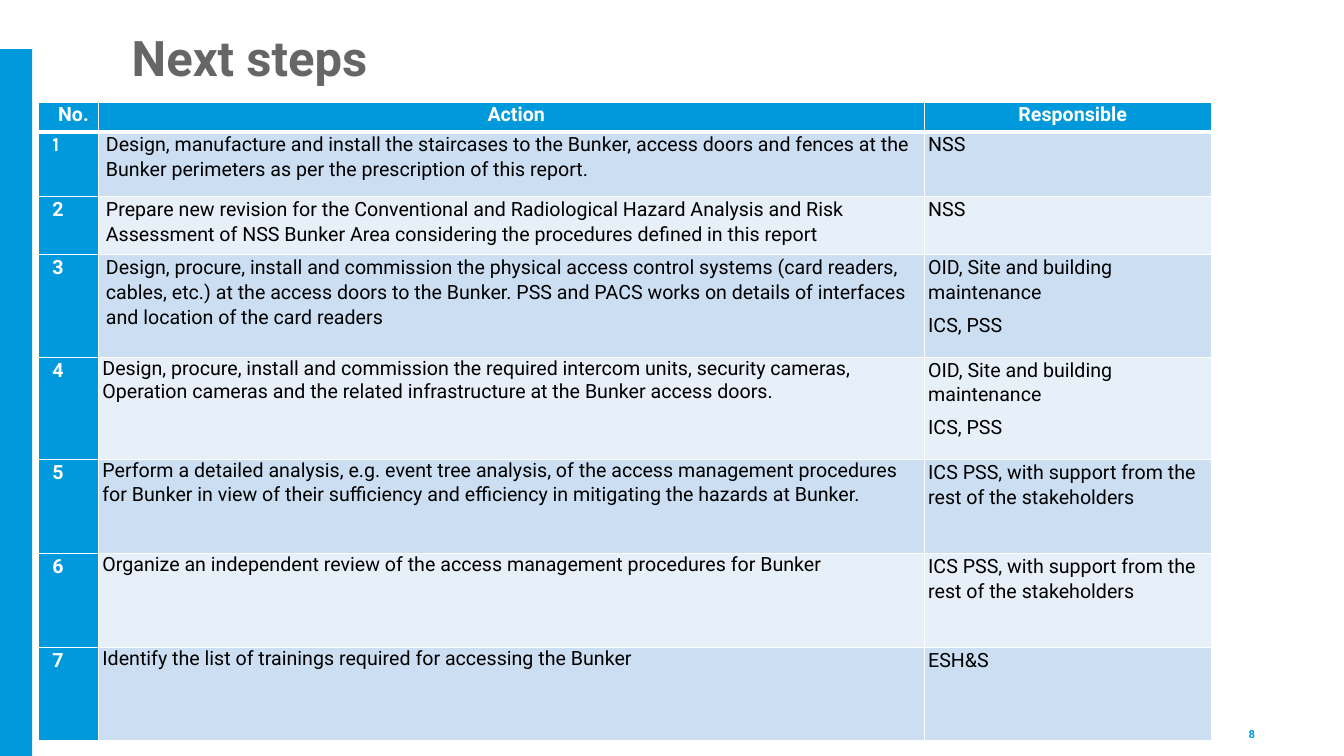
from lxml import etree
from pptx import Presentation
from pptx import util as u
from pptx.dml.color import RGBColor
from pptx.enum import shapes, text
from pptx.oxml import ns

BLUE = RGBColor(0x00, 0x99, 0xDC)
GREY = RGBColor(0x66, 0x66, 0x66)
BLACK = RGBColor(0x00, 0x00, 0x00)
WHITE = RGBColor(0xFF, 0xFF, 0xFF)
BANDS = [RGBColor(0xCC, 0xDE, 0xF2), RGBColor(0xE7, 0xEF, 0xF9)]

LEFT, CENTER, RIGHT = text.PP_ALIGN.LEFT, text.PP_ALIGN.CENTER, text.PP_ALIGN.RIGHT


def write(frame, content, size=14, color=BLACK, bold=False, font="Roboto",
          align=LEFT, line=1.0, after=0, indent=0):
    for index, words in enumerate(content.split("\n")):
        para = frame.add_paragraph() if index else frame.paragraphs[0]
        para.alignment = align
        para.line_spacing = line
        para.space_after = u.Pt(after)
        para._p.get_or_add_pPr().set("marL", str(u.Cm(indent)))
        span = para.add_run()
        span.text = words
        span.font.size = u.Pt(size)
        span.font.name = font
        span.font.bold = bold
        span.font.color.rgb = color


def style_cell(cell, fill, margin=0.1, bottom=1):
    cell.margin_left = cell.margin_right = u.Cm(margin)
    cell.margin_top = cell.margin_bottom = 0
    properties = cell._tc.get_or_add_tcPr()
    for side, width in (("lnL", 1), ("lnR", 1), ("lnT", 1), ("lnB", bottom)):
        border = etree.SubElement(properties, ns.qn("a:" + side), w=str(u.Pt(width)))
        paint = etree.SubElement(border, ns.qn("a:solidFill"))
        etree.SubElement(paint, ns.qn("a:srgbClr"), val=str(WHITE))
    cell.fill.solid()
    cell.fill.fore_color.rgb = fill


deck = Presentation()
deck.slide_width, deck.slide_height = u.Cm(33.87), u.Cm(19.05)
page = deck.slides.add_slide(deck.slide_layouts[6])

bar = page.shapes.add_shape(
    shapes.MSO_SHAPE.RECTANGLE, 0, u.Cm(1.24), u.Cm(0.81), u.Cm(17.81))
bar.shadow.inherit = False
bar.fill.solid()
bar.fill.fore_color.rgb = BLUE
bar.line.fill.background()

title = page.shapes.add_textbox(u.Cm(3.07), u.Cm(0.74), u.Cm(26.01), u.Cm(1.83))
title.text_frame.word_wrap = True
title.text_frame.margin_bottom = u.Cm(0.05)
write(title.text_frame, "Next steps", size=35, color=GREY, bold=True, line=0.9)

number = page.shapes.add_textbox(u.Cm(24.26), u.Cm(17.98), u.Cm(7.62), u.Cm(1.02))
number.text_frame.word_wrap = True
number.text_frame.vertical_anchor = text.MSO_ANCHOR.MIDDLE
write(number.text_frame, "8", size=8, color=BLUE, bold=True, align=RIGHT)

headings = ["No.", "Action", "Responsible"]
steps = [
    ("Design, manufacture and install the staircases to the Bunker, access doors and "
     "fences at the Bunker perimeters as per the prescription of this report.",
     "NSS"),
    ("Prepare new revision for the Conventional and Radiological Hazard Analysis and Risk "
     "Assessment of NSS Bunker Area considering the procedures defined in this report",
     "NSS"),
    ("Design, procure, install and commission the physical access control systems (card "
     "readers, cables, etc.) at the access doors to the Bunker. PSS and PACS works on "
     "details of interfaces and location of the card readers",
     "OID, Site and building maintenance\nICS, PSS"),
    ("Design, procure, install and commission the required intercom units, security "
     "cameras, Operation cameras and the related infrastructure at the Bunker access doors.",
     "OID, Site and building maintenance\nICS, PSS"),
    ("Perform a detailed analysis, e.g. event tree analysis, of the access management "
     "procedures for Bunker in view of their sufficiency and efficiency in mitigating the "
     "hazards at Bunker.",
     "ICS PSS, with support from the rest of the stakeholders"),
    ("Organize an independent review of the access management procedures for Bunker",
     "ICS PSS, with support from the rest of the stakeholders"),
    ("Identify the list of trainings required for accessing the Bunker", "ESH&S"),
]
widths = [1.51, 20.81, 7.24]
heights = [0.75, 1.63, 1.47, 2.58, 2.58, 2.37, 2.37, 2.33]

table = page.shapes.add_table(
    len(heights), len(widths), u.Cm(0.97), u.Cm(2.57),
    u.Cm(sum(widths)), u.Cm(sum(heights))).table
for column, width in zip(table.columns, widths):
    column.width = u.Cm(width)
for row, height in zip(table.rows, heights):
    row.height = u.Cm(height)

for column, heading in enumerate(headings):
    cell = table.cell(0, column)
    style_cell(cell, BLUE, bottom=3)
    write(cell.text_frame, heading, color=WHITE, bold=True, align=CENTER,
          line=1.07, after=8, indent=0.25)

for row, (action, responsible) in enumerate(steps, start=1):
    band = BANDS[(row - 1) % 2]
    spaced = row <= 3
    number_cell, action_cell, responsible_cell = table.rows[row].cells
    style_cell(number_cell, BLUE)
    write(number_cell.text_frame, str(row), color=WHITE, bold=True,
          font="Karla" if row == 1 else "Roboto", line=1.07, after=8, indent=0.25)
    style_cell(action_cell, band, margin=0.19 if spaced else 0.1)
    write(action_cell.text_frame, action, line=1.07 if spaced else 1.0,
          after=6 if spaced else 0)
    style_cell(responsible_cell, band)
    write(responsible_cell.text_frame, responsible, line=1.07, after=6)

deck.save("out.pptx")
